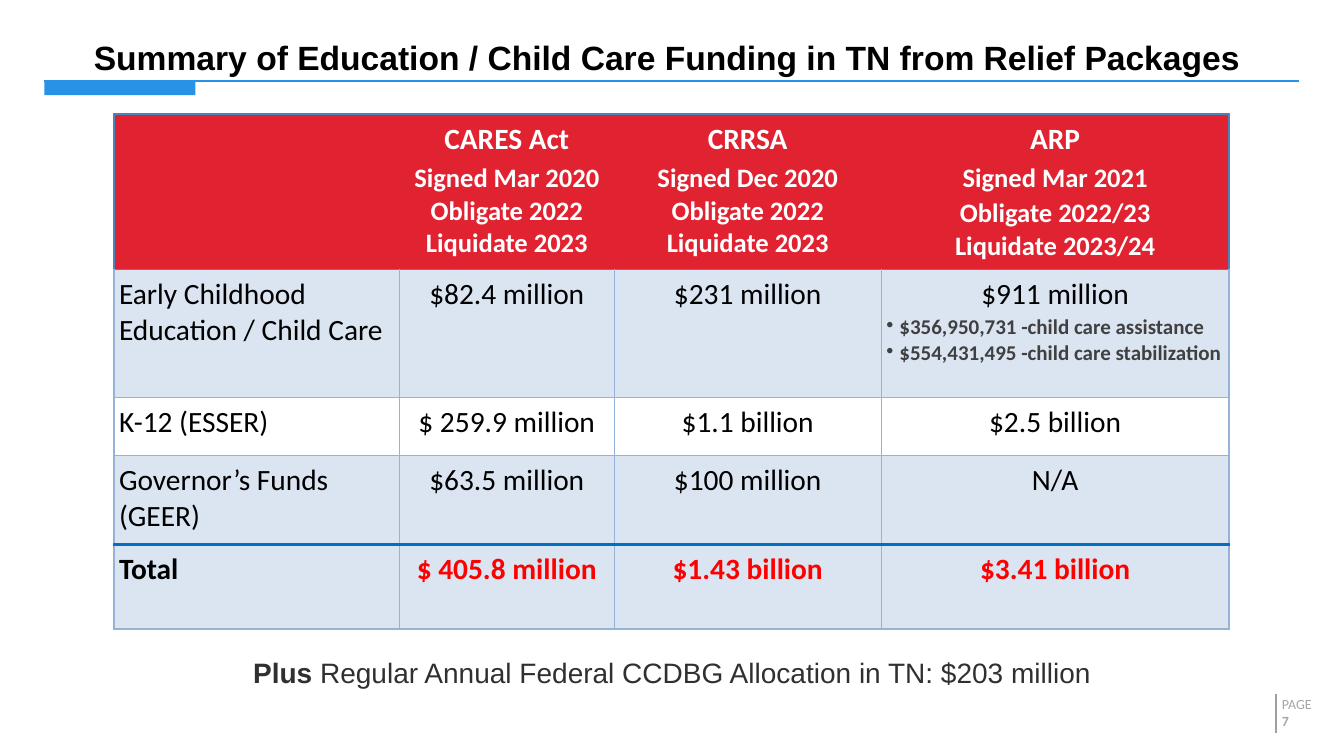
"""Build the slide on Tennessee education and child care relief funding."""
from lxml import etree
from pptx import Presentation
from pptx import util as u
from pptx.dml.color import RGBColor
from pptx.enum import shapes, text
from pptx.oxml.ns import qn

TITLE = "Summary of Education / Child Care Funding in TN from Relief Packages"
HEADERS = [
    [],
    ["CARES Act", "Signed Mar 2020 Obligate 2022", "Liquidate 2023"],
    ["CRRSA", "Signed Dec 2020 Obligate 2022", "Liquidate 2023"],
    ["ARP", "Signed Mar 2021", "Obligate 2022/23", "Liquidate 2023/24"],
]
FUNDS = [
    ["Early Childhood Education / Child Care", "$82.4 million", "$231 million", "$911 million"],
    ["K-12 (ESSER)", "$ 259.9 million", "$1.1 billion", "$2.5 billion"],
    ["Governor’s Funds (GEER)", "$63.5 million", "$100 million", "N/A"],
    ["Total", "$ 405.8 million", "$1.43 billion", "$3.41 billion"],
]
ARP_DETAILS = ["$356,950,731 -child care assistance", "$554,431,495 -child care stabilization"]
NOTE = [("Plus", True), (" Regular Annual Federal CCDBG Allocation in TN: $203 million", False)]
PAGE = [("PAGE", False), ("7", True)]

COLORS = {
    "black": "000000", "white": "FFFFFF", "blue": "2893E6", "header": "E02231",
    "band": "DBE5F1", "grid": "95B3D7", "header_edge": "4F81BD", "total_edge": "0070C0",
    "total": "FF0000", "detail": "404040", "note": "303030", "page": "A6A6A6", "divider": "A0A0A0",
}
COLUMN_WIDTHS = [203.9, 153.4, 190.8, 248.4]
ROW_HEIGHTS = [110.9, 91.4, 41.8, 63.4, 60.5]
TABLE_LEFT, TABLE_TOP = 81.4, 81.4
TOTAL_ROW = len(FUNDS)
CENTER = text.PP_ALIGN.CENTER


def rgb(name):
    return RGBColor.from_string(COLORS[name])


def add_run(paragraph, words, size, color, bold=False, font="Calibri"):
    run = paragraph.add_run()
    run.text = words
    run.font.size, run.font.bold, run.font.name = u.Pt(size), bold, font
    run.font.color.rgb = rgb(color)


def next_paragraph(frame, is_first):
    return frame.paragraphs[0] if is_first else frame.add_paragraph()


def set_margins(frame, left=0, top=0, right=0, bottom=0):
    frame.margin_left, frame.margin_top = u.Pt(left), u.Pt(top)
    frame.margin_right, frame.margin_bottom = u.Pt(right), u.Pt(bottom)


def add_line(slide, start, end, color, width):
    line = slide.shapes.add_connector(
        shapes.MSO_CONNECTOR.STRAIGHT, *[u.Pt(value) for value in start + end])
    line.line.color.rgb, line.line.width = rgb(color), u.Pt(width)
    etree.SubElement(line._element.spPr, qn("a:effectLst"))


def add_text_box(slide, left, top, width, height):
    box = slide.shapes.add_textbox(*[u.Pt(value) for value in (left, top, width, height)])
    box.text_frame.word_wrap = True
    return box.text_frame


def set_borders(cell, edges):
    properties = cell._tc.get_or_add_tcPr()
    for side in "LRTB":
        border = etree.SubElement(properties, qn("a:ln" + side))
        if edges[side] is None:
            etree.SubElement(border, qn("a:noFill"))
            continue
        color, width = edges[side]
        border.set("w", str(u.Pt(width)))
        fill = etree.SubElement(border, qn("a:solidFill"))
        etree.SubElement(fill, qn("a:srgbClr"), val=COLORS[color])


def cell_edges(row, column):
    header_edge, grid, total_edge = ("header_edge", 1), ("grid", 1), ("total_edge", 2.25)
    if row == 0:
        return {"L": header_edge if column == 0 else None,
                "R": header_edge if column == len(COLUMN_WIDTHS) - 1 else None,
                "T": header_edge, "B": header_edge}
    top = {1: header_edge, TOTAL_ROW: total_edge}.get(row, grid)
    return {"L": grid, "R": grid, "T": top, "B": total_edge if row == TOTAL_ROW - 1 else grid}


def fill_header(cell, lines):
    for index, words in enumerate(lines):
        paragraph = next_paragraph(cell.text_frame, index == 0)
        paragraph.alignment = CENTER
        paragraph.space_before = u.Pt(2 if 0 < index < len(lines) - 1 else 0)
        paragraph.space_after = u.Pt(2 if index == 0 else 0)
        add_run(paragraph, words, 21 if index == 0 else 19, "white", True)


def fill_amount(cell, words, row, column):
    paragraph = cell.text_frame.paragraphs[0]
    paragraph.alignment = CENTER if column else text.PP_ALIGN.LEFT
    paragraph.space_after = u.Pt(3 if row == TOTAL_ROW else 2)
    is_total = row == TOTAL_ROW
    add_run(paragraph, words, 21, "total" if is_total and column else "black", is_total)


def add_details(cell):
    for words in ARP_DETAILS:
        paragraph = cell.text_frame.add_paragraph()
        properties = paragraph._p.get_or_add_pPr()
        properties.set("marL", str(u.Pt(9.4)))
        properties.set("indent", str(u.Pt(-9.4)))
        etree.SubElement(properties, qn("a:buChar"), char="•")
        add_run(paragraph, words, 15, "detail", True)


def add_funding_table(slide):
    table = slide.shapes.add_table(
        len(ROW_HEIGHTS), len(COLUMN_WIDTHS), u.Pt(TABLE_LEFT), u.Pt(TABLE_TOP),
        u.Pt(sum(COLUMN_WIDTHS)), u.Pt(sum(ROW_HEIGHTS))).table
    for column, width in zip(table.columns, COLUMN_WIDTHS):
        column.width = u.Pt(width)
    for row, height in zip(table.rows, ROW_HEIGHTS):
        row.height = u.Pt(height)
    for row, contents in enumerate([HEADERS] + FUNDS):
        for column, content in enumerate(contents):
            cell = table.cell(row, column)
            set_margins(cell, 3.6, 5, 3.6, 5)
            set_borders(cell, cell_edges(row, column))
            cell.fill.solid()
            cell.fill.fore_color.rgb = rgb({0: "header", 2: "white"}.get(row, "band"))
            if row == 0:
                fill_header(cell, content)
            else:
                fill_amount(cell, content, row, column)
    add_details(table.cell(1, len(COLUMN_WIDTHS) - 1))


def add_title(slide):
    title = slide.shapes.title
    title.left, title.top, title.width, title.height = u.Pt(0), u.Pt(0), u.Pt(960), u.Pt(81.4)
    frame = title.text_frame
    frame.word_wrap, frame.vertical_anchor = True, text.MSO_ANCHOR.MIDDLE
    set_margins(frame, right=7.2)
    frame.paragraphs[0].alignment = CENTER
    add_run(frame.paragraphs[0], TITLE, 24, "black", True, "Arial")


def main():
    presentation = Presentation()
    presentation.slide_width, presentation.slide_height = u.Pt(960), u.Pt(540)
    slide = presentation.slides.add_slide(presentation.slide_layouts[5])

    add_line(slide, (911.5, 495.4), (911.5, 523.4), "divider", 1.5)
    page_frame = add_text_box(slide, 908.6, 493.2, 41.8, 31.7)
    for index, (words, bold) in enumerate(PAGE):
        add_run(next_paragraph(page_frame, index == 0), words, 10, "page", bold)

    accent = slide.shapes.add_shape(
        shapes.MSO_SHAPE.RECTANGLE, u.Pt(31.7), u.Pt(58.3), u.Pt(108), u.Pt(9.7))
    accent.shadow.inherit = False
    accent.fill.solid()
    accent.fill.fore_color.rgb = rgb("blue")
    accent.line.fill.background()
    add_line(slide, (31.7, 57.9), (928.1, 57.9), "blue", 1.25)

    add_title(slide)
    add_funding_table(slide)

    note_frame = add_text_box(slide, 141.1, 468, 678.2, 32.4)
    set_margins(note_frame)
    note_frame.paragraphs[0].alignment = CENTER
    for words, bold in NOTE:
        add_run(note_frame.paragraphs[0], words, 20, "note", bold, "Arial")

    presentation.save("out.pptx")


if __name__ == "__main__":
    main()
